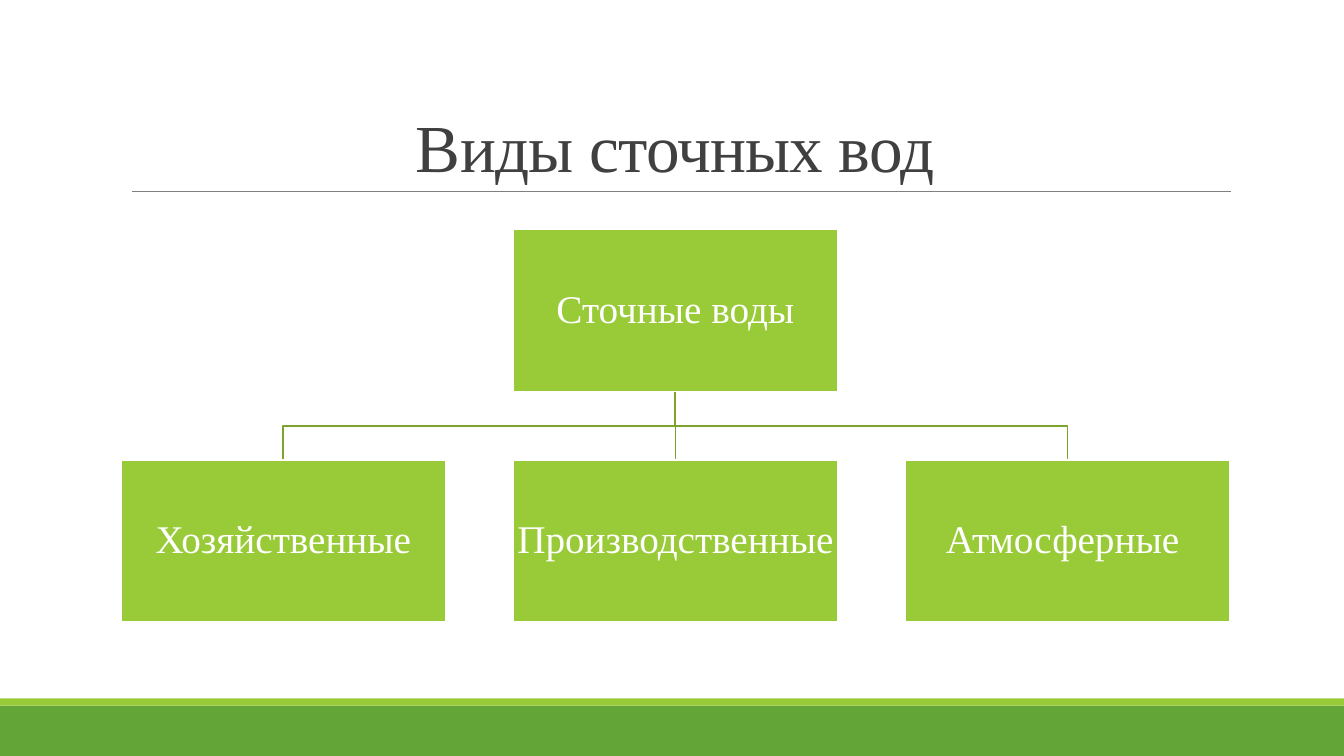
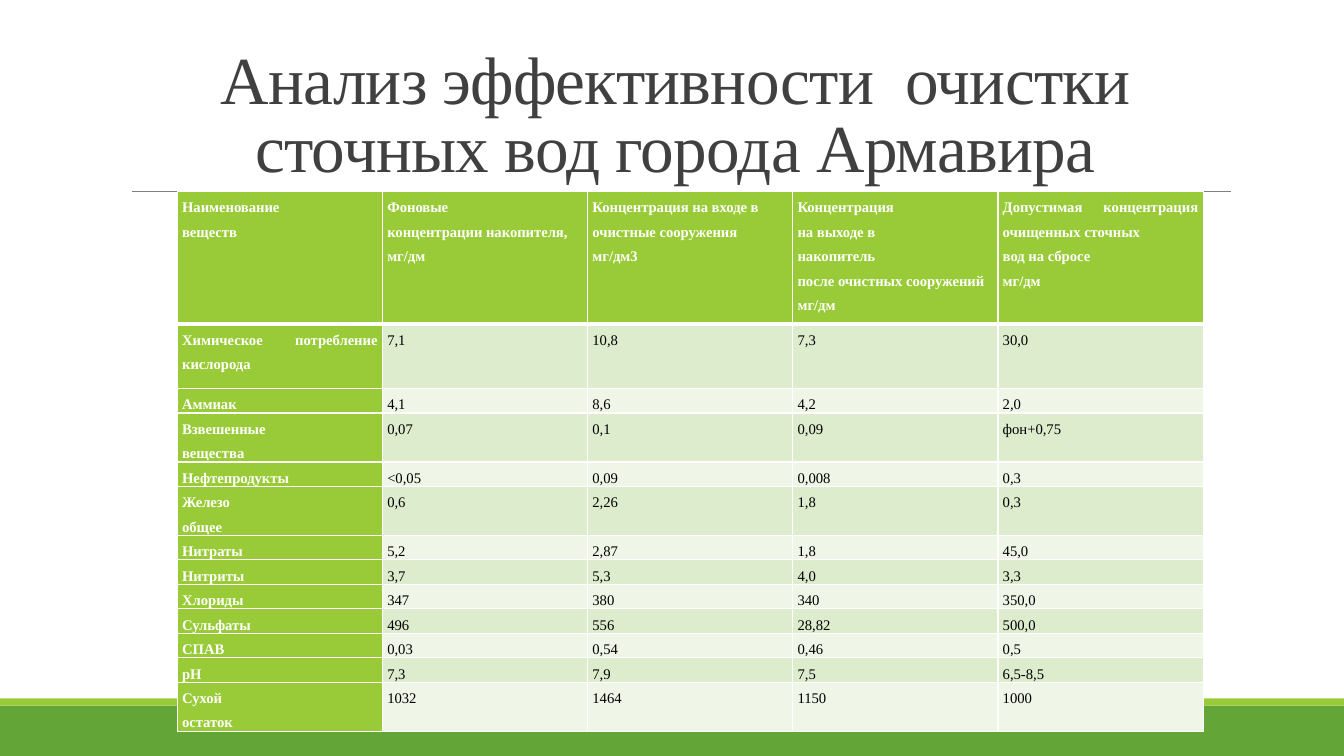
"""Build two slides on waste water: a tree of kinds and a table of results."""
from lxml.etree import SubElement
from pptx import Presentation
from pptx.dml.color import RGBColor
from pptx.enum.shapes import MSO_CONNECTOR, MSO_SHAPE
from pptx.enum.text import MSO_ANCHOR, MSO_AUTO_SIZE, PP_ALIGN
from pptx.oxml import parse_xml
from pptx.oxml.ns import nsdecls, qn
from pptx.util import Cm, Pt

LIME, GREEN, OLIVE = "99CB38", "63A537", "7BA32D"
WHITE, BLACK, DARK, GREY = "FFFFFF", "000000", "404040", "808080"
BANDS = ["DEECCE", "EFF6E8"]
FACE = "Times New Roman"

TITLE = {
    "frame": {"vertical_anchor": MSO_ANCHOR.BOTTOM, "word_wrap": True,
              "auto_size": MSO_AUTO_SIZE.NONE},
    "para": {"alignment": PP_ALIGN.CENTER, "line_spacing": 0.85},
    "font": {"size": Pt(48), "name": FACE},
}
BOX = {
    "frame": {"vertical_anchor": MSO_ANCHOR.MIDDLE, "word_wrap": True,
              "margin_left": Cm(0.05), "margin_right": Cm(0.05),
              "margin_top": Cm(0.05), "margin_bottom": Cm(0.05)},
    "para": {"alignment": PP_ALIGN.CENTER, "line_spacing": 0.9},
    "font": {"size": Pt(28), "name": FACE},
}
CELL = {
    "frame": {},
    "para": {"alignment": PP_ALIGN.JUSTIFY, "line_spacing": 1.5},
    "font": {"size": Pt(10.5), "name": FACE},
}
INSET = {"margin_left": Cm(0.12), "margin_right": Cm(0.12),
         "margin_top": 0, "margin_bottom": 0}


def tint(code):
    """Turn a hex string into a colour."""
    return RGBColor.from_string(code)


def write(frame, text, look, hue, bold=False):
    """Put text in a frame and format it."""
    frame.text = text
    pairs = [(frame, look["frame"])]
    for para in frame.paragraphs:
        pairs.append((para, look["para"]))
        for run in para.runs:
            pairs.append((run.font, {**look["font"], "bold": bold}))
            pairs.append((run.font.color, {"rgb": tint(hue)}))
    for item, values in pairs:
        for name, value in values.items():
            setattr(item, name, value)


deck = Presentation()
deck.slide_width, deck.slide_height = Cm(33.87), Cm(19.05)
plan = deck.slide_layouts[5]

slides = []
for text in ["Виды сточных вод",
             "Анализ эффективности  очистки сточных вод города Армавира"]:
    slide = deck.slides.add_slide(plan)
    title = slide.shapes.title
    title.left, title.top = Cm(3.05), Cm(0.79)
    title.width, title.height = Cm(27.94), Cm(4.04)
    write(title.text_frame, text, TITLE, DARK)
    for props in title.element.iter(qn("a:rPr")):
        props.set("spc", "-50")
    slides.append(slide)
tree, grid = [slide.shapes for slide in slides]

decor = []
for top, high, hue in [(17.78, 1.27, GREEN), (17.6, 0.18, LIME)]:
    band = tree.add_shape(MSO_SHAPE.RECTANGLE, 0, Cm(top), deck.slide_width, Cm(high))
    band.shadow.inherit = False
    band.fill.solid()
    band.fill.fore_color.rgb = tint(hue)
    band.line.fill.background()
    decor.append(band)
rule = tree.add_connector(MSO_CONNECTOR.STRAIGHT, Cm(3.33), Cm(4.82), Cm(31.01), Cm(4.82))
rule.line.color.rgb = tint(GREY)
rule.line.width = Pt(0.5)
SubElement(rule.element.spPr, qn("a:effectLst"))
decor.append(rule)
for order, part in enumerate(decor, 20):
    for props in part.element.iter(qn("p:cNvPr")):
        props.set("id", str(order))
    plan.shapes.element.append(part.element)

LEFT, STEP, WIDE, HIGH = 3.05, 9.88, 8.18, 4.09
ROOT, LEAF = 5.78, 11.59
start, end = ROOT + HIGH, LEAF
bend = (start + end) / 2
mid = LEFT + STEP + WIDE / 2

for side in [1, -1]:
    far = mid + side * STEP
    path = tree.build_freeform(Cm(mid), Cm(start))
    path.add_line_segments([(Cm(x), Cm(y)) for x, y in
                            [(mid, bend), (far, bend), (far, end)]], close=False)
    elbow = path.convert_to_shape()
    elbow.shadow.inherit = False
    elbow.fill.background()
    elbow.line.color.rgb = tint(OLIVE)
    elbow.line.width = Pt(1.25)

stem = tree.add_connector(MSO_CONNECTOR.STRAIGHT, Cm(mid), Cm(start), Cm(mid), Cm(end))
stem.line.color.rgb = tint(OLIVE)
stem.line.width = Pt(1.25)
SubElement(stem.element.spPr, qn("a:effectLst"))

boxes = []
for text, col, top in [("Сточные воды", 1, ROOT), ("Хозяйственные", 0, LEAF),
                       ("Производственные", 1, LEAF), ("Атмосферные ", 2, LEAF)]:
    box = tree.add_shape(MSO_SHAPE.RECTANGLE, Cm(LEFT + col * STEP), Cm(top),
                         Cm(WIDE), Cm(HIGH))
    box.shadow.inherit = False
    box.fill.solid()
    box.fill.fore_color.rgb = tint(LIME)
    box.line.color.rgb = tint(WHITE)
    box.line.width = Pt(1.25)
    write(box.text_frame, text, BOX, WHITE)
    boxes.append(box)
stem.begin_connect(boxes[0], 2)
stem.end_connect(boxes[2], 0)

rows = [
    ["Наименование\nвеществ",
     "Фоновые\nконцентрации накопителя,\nмг/дм",
     "Концентрация на входе в\nочистные сооружения\nмг/дм3",
     "Концентрация\nна выходе в\nнакопитель\nпосле очистных сооружений\nмг/дм",
     "Допустимая концентрация очищенных сточных\nвод на сбросе\nмг/дм"],
    ["Химическое потребление кислорода", "7,1", "10,8", "7,3", "30,0"],
    ["Аммиак", "4,1", "8,6", "4,2", "2,0"],
    ["Взвешенные\nвещества", "0,07", "0,1", "0,09", "фон+0,75"],
    ["Нефтепродукты", "<0,05", "0,09", "0,008", "0,3"],
    ["Железо\nобщее", "0,6", "2,26", "1,8", "0,3"],
    ["Нитраты", "5,2", "2,87", "1,8", "45,0"],
    ["Нитриты", "3,7", "5,3", "4,0", "3,3"],
    ["Хлориды", "347", "380", "340", "350,0"],
    ["Сульфаты", "496", "556", "28,82", "500,0"],
    ["СПАВ", "0,03", "0,54", "0,46", "0,5"],
    ["рН", "7,3", "7,9", "7,5", "6,5-8,5"],
    ["Сухой\nостаток", "1032", "1464", "1150", "1000"],
]
highs = [3.33, 1.63] + [0.61 * len(row[0].split("\n")) for row in rows[2:]]
holder = grid.add_table(len(rows), len(rows[0]), Cm(4.47), Cm(4.83),
                        Cm(25.85), Cm(sum(highs)))
table = holder.table
table.first_col = True
table.horz_banding = False
for col in table.columns:
    col.width = Cm(5.17)
for r, row in enumerate(rows):
    table.rows[r].height = Cm(highs[r])
    for c, text in enumerate(row):
        cell = table.cell(r, c)
        head = r == 0 or c == 0
        for name, value in INSET.items():
            setattr(cell, name, value)
        cell.fill.solid()
        cell.fill.fore_color.rgb = tint(LIME if head else BANDS[(r - 1) % 2])
        write(cell.text_frame, text, CELL, WHITE if head else BLACK, head)

for n, props in enumerate(holder.element.iter(qn("a:tcPr"))):
    r = n // len(rows[0])
    for spot, side in enumerate(["L", "R", "T", "B"]):
        thick = 3 if (r, side) in [(0, "B"), (1, "T")] else 1
        props.insert(spot, parse_xml(
            f'<a:ln{side} {nsdecls("a")} w="{Pt(thick)}"><a:solidFill>'
            f'<a:srgbClr val="{WHITE}"/></a:solidFill></a:ln{side}>'))

deck.save("out.pptx")
